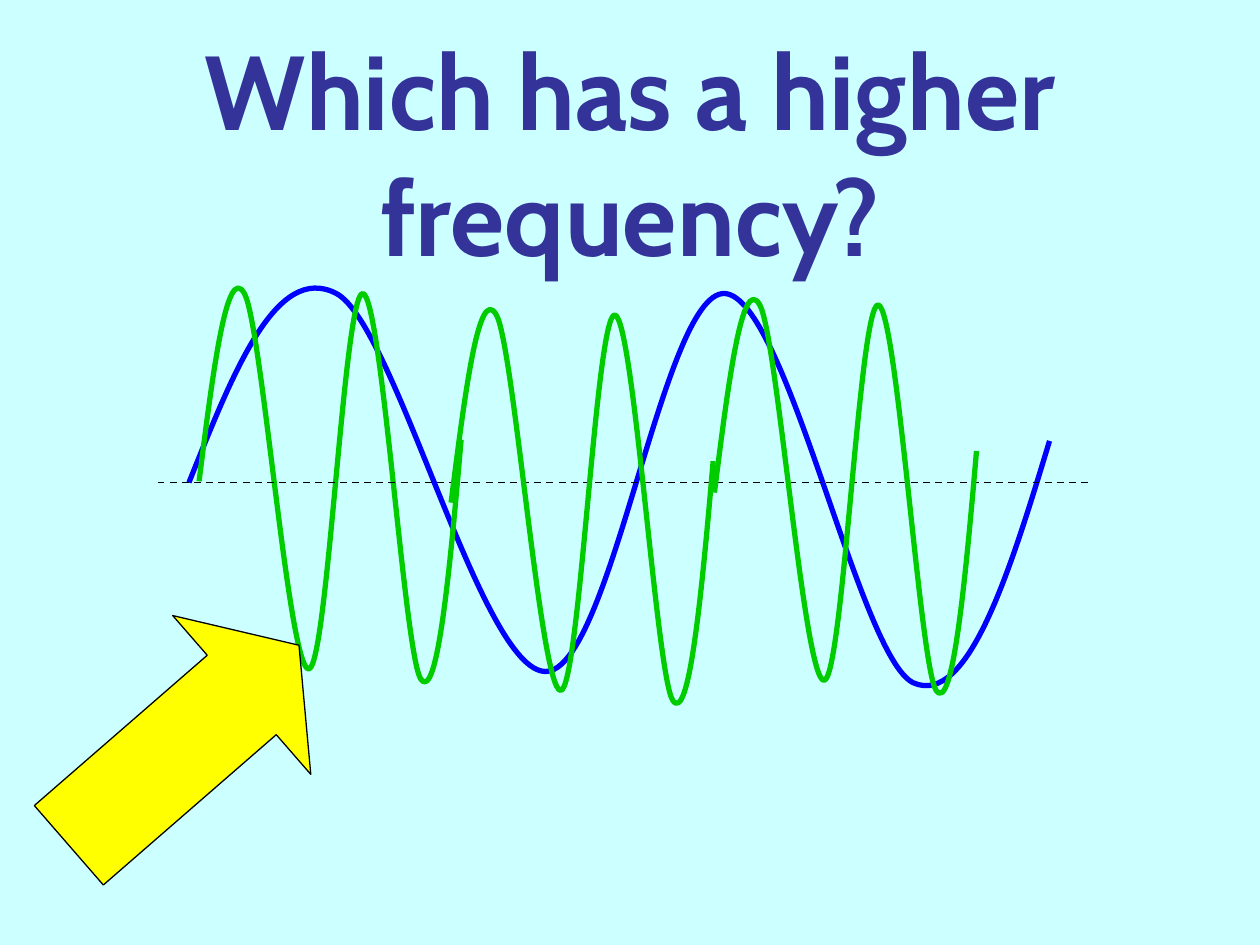
from dataclasses import dataclass

from lxml import etree
from pptx import Presentation
from pptx.dml.color import RGBColor
from pptx.enum.dml import MSO_LINE
from pptx.enum.shapes import MSO_CONNECTOR, MSO_SHAPE
from pptx.enum.text import MSO_ANCHOR, MSO_AUTO_SIZE, PP_ALIGN
from pptx.oxml.ns import qn
from pptx.util import Emu, Pt

DASH = MSO_LINE.DASH
STRAIGHT = MSO_CONNECTOR.STRAIGHT
RIGHT_ARROW = MSO_SHAPE.RIGHT_ARROW
MIDDLE = MSO_ANCHOR.MIDDLE
NO_AUTOFIT = MSO_AUTO_SIZE.NONE
CENTER = PP_ALIGN.CENTER

EMU_PER_PX = 9144
TITLE_ONLY = 5

LOW_WAVE = [
    (0, 175), (35, 88), (69, 0), (117, 25), (164, 50), (232, 325), (283, 325), (335, 325),
    (376, 24), (425, 25), (474, 27), (532, 314), (575, 334), (618, 353), (651, 248), (683, 142),
]
HIGH_WAVE = [
    (0, 174), (11, 87), (22, 0), (36, 25), (50, 50), (71, 323), (87, 323), (102, 323),
    (115, 24), (130, 25), (145, 27), (163, 312), (176, 331), (189, 350), (199, 246), (208, 141),
]


@dataclass(frozen=True)
class Theme:
    """Colours, font and sizes of the slide."""
    background: RGBColor = RGBColor(0xCC, 0xFF, 0xFF)
    title: RGBColor = RGBColor(0x33, 0x33, 0x99)
    low_wave: RGBColor = RGBColor(0x00, 0x00, 0xFF)
    high_wave: RGBColor = RGBColor(0x00, 0xCC, 0x00)
    outline: RGBColor = RGBColor(0x00, 0x00, 0x00)
    arrow: RGBColor = RGBColor(0xFF, 0xFF, 0x00)
    font: str = "Cabin"
    title_size: Pt = Pt(60)
    wave_width: Pt = Pt(3)
    axis_width: Pt = Pt(1)
    arrow_width: Pt = Pt(0.75)


THEME = Theme()


def px(length):
    """Turn pixels into EMU."""
    return Emu(length * EMU_PER_PX)


def set_line(shape, color, width):
    """Give a shape a plain line."""
    shape.line.color.rgb = color
    shape.line.width = width


def add_title(slide, text, left, top, width, height):
    """Place and format the title placeholder."""
    title = slide.shapes.title
    title.left, title.top, title.width, title.height = map(px, (left, top, width, height))
    frame = title.text_frame
    frame.word_wrap = True
    frame.auto_size = NO_AUTOFIT
    frame.vertical_anchor = MIDDLE
    paragraph = frame.paragraphs[0]
    paragraph.alignment = CENTER
    run = paragraph.add_run()
    run.text = text
    run.font.name = THEME.font
    run.font.size = THEME.title_size
    run.font.bold = True
    run.font.color.rgb = THEME.title


def add_wave(slide, points, left, top, color):
    """Draw an open Bezier curve whose points are relative to its corner."""
    (start_x, start_y), *others = points
    builder = slide.shapes.build_freeform(start_x, start_y, scale=EMU_PER_PX)
    builder.add_line_segments(others, close=False)
    wave = builder.convert_to_shape(px(left), px(top))
    segments = list(wave.element.iter(qn("a:lnTo")))
    for first in range(0, len(segments), 3):
        curve = etree.SubElement(segments[first].getparent(), qn("a:cubicBezTo"))
        for segment in segments[first:first + 3]:
            curve.append(segment[0])
            segment.getparent().remove(segment)
    wave.fill.background()
    wave.shadow.inherit = False
    set_line(wave, color, THEME.wave_width)


def add_axis(slide, left, top, width):
    """Draw the dashed rest line of the waves."""
    axis = slide.shapes.add_connector(STRAIGHT, px(left), px(top), px(left + width), px(top))
    set_line(axis, THEME.outline, THEME.axis_width)
    axis.line.dash_style = DASH
    etree.SubElement(axis.element.spPr, qn("a:effectLst"))


def add_pointer(slide, left, top, width, height, rotation):
    """Draw the block arrow that points at the answer."""
    arrow = slide.shapes.add_shape(RIGHT_ARROW, px(left), px(top), px(width), px(height))
    arrow.adjustments[0] = 0.5
    arrow.adjustments[1] = 0.36
    arrow.rotation = rotation
    arrow.shadow.inherit = False
    arrow.fill.solid()
    arrow.fill.fore_color.rgb = THEME.arrow
    set_line(arrow, THEME.outline, THEME.arrow_width)


def add_wave_area(slide, left, top):
    """Place both waves, their axis and the pointer from the area's corner."""
    add_wave(slide, LOW_WAVE, left + 25, top, THEME.low_wave)
    add_wave(slide, HIGH_WAVE, left + 33, top, THEME.high_wave)
    add_axis(slide, left, top + 175, 742)
    add_pointer(slide, left - 100, top + 300, 242, 167, 319)
    for offset_x, offset_y in ((233, 17), (442, 9)):
        add_wave(slide, HIGH_WAVE, left + offset_x, top + offset_y, THEME.high_wave)


def main():
    """Build and save the presentation."""
    presentation = Presentation()
    presentation.slide_width = px(1000)
    presentation.slide_height = px(750)
    slide = presentation.slides.add_slide(presentation.slide_layouts[TITLE_ONLY])
    slide.background.fill.solid()
    slide.background.fill.fore_color.rgb = THEME.background
    add_title(slide, "Which has a higher frequency?", 50, 58, 900, 125)
    add_wave_area(slide, 125, 208)
    presentation.save("out.pptx")


if __name__ == "__main__":
    main()
